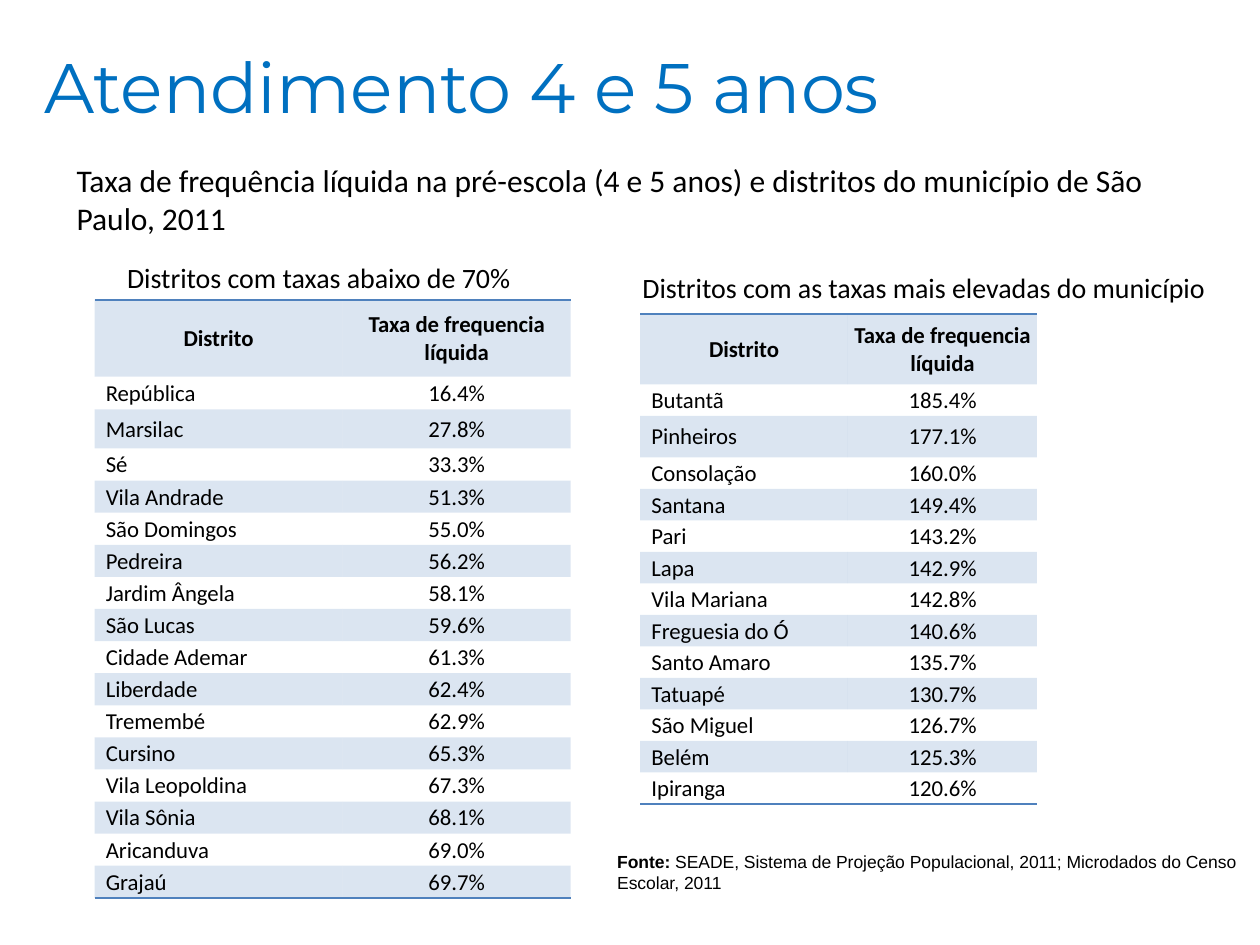
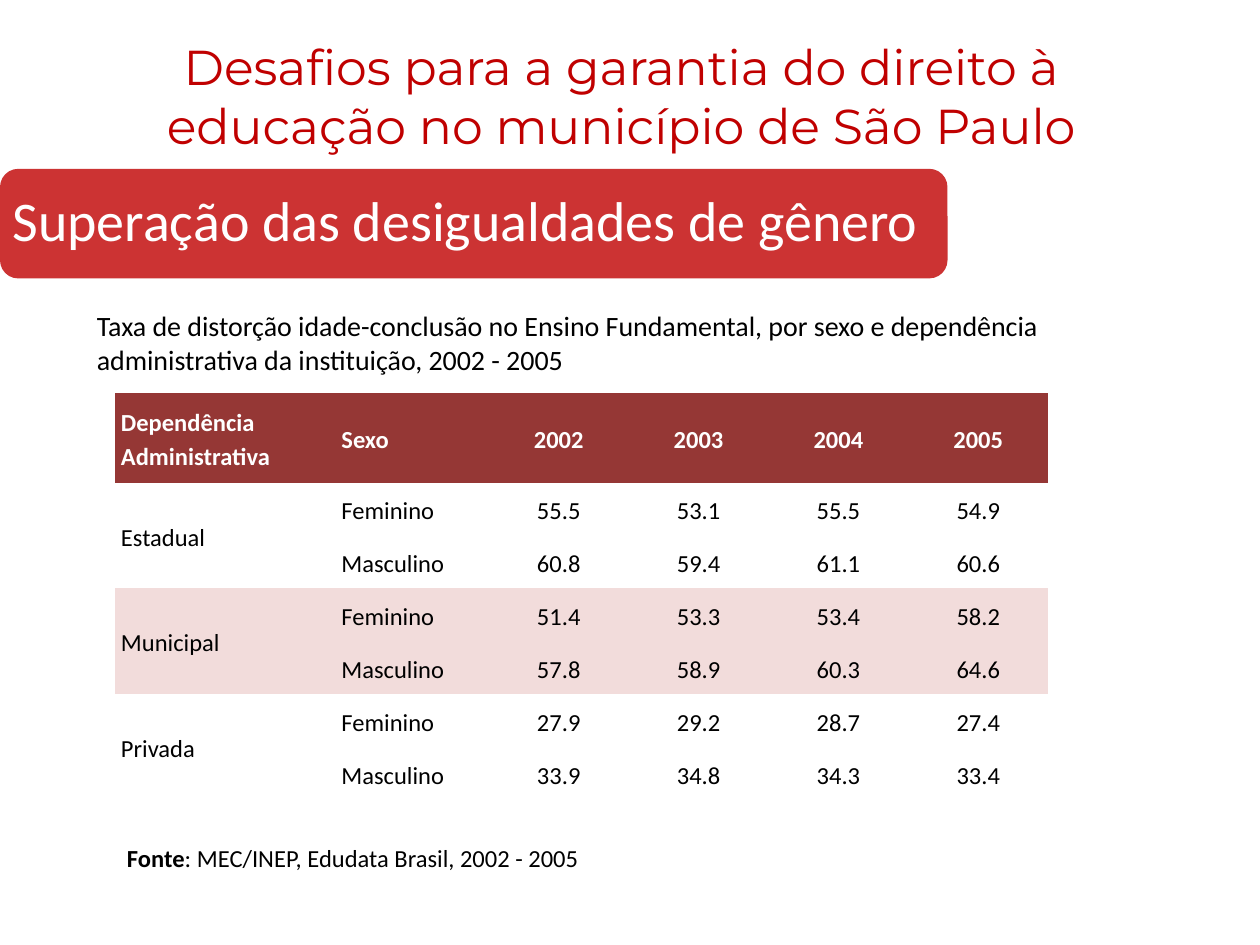
from lxml import etree
from pptx import Presentation
from pptx import util as u
from pptx.dml.color import RGBColor
from pptx.enum import shapes, text
from pptx.oxml.ns import qn

BLACK, WHITE = "000000", "FFFFFF"
TITLE_BLUE, TABLE_BLUE = "0070C0", "4F81BD"
RED, DARK_RED, PALE_RED = "C00000", "953735", "F2DCDB"
TITLE_FONT, BODY_FONT, SOURCE_FONT = "Montserrat", "Calibri", "Arial"
LEFT, CENTER = text.PP_ALIGN.LEFT, text.PP_ALIGN.CENTER
PLAIN_TABLE = "{2D5ABB26-0587-4C30-8999-92F81FD0307C}"
TITLE_ONLY = 5

DISTRICT_HEADER = ("Distrito", "Taxa de frequencia líquida")
LOWEST_RATES = [
    ("República", "16.4%"), ("Marsilac", "27.8%"), ("Sé", "33.3%"),
    ("Vila Andrade", "51.3%"), ("São Domingos", "55.0%"), ("Pedreira", "56.2%"),
    ("Jardim Ângela", "58.1%"), ("São Lucas", "59.6%"), ("Cidade Ademar", "61.3%"),
    ("Liberdade", "62.4%"), ("Tremembé", "62.9%"), ("Cursino", "65.3%"),
    ("Vila Leopoldina", "67.3%"), ("Vila Sônia", "68.1%"),
    ("Aricanduva", "69.0%"), ("Grajaú", "69.7%"),
]
HIGHEST_RATES = [
    ("Butantã", "185.4%"), ("Pinheiros", "177.1%"), ("Consolação", "160.0%"),
    ("Santana", "149.4%"), ("Pari", "143.2%"), ("Lapa", "142.9%"),
    ("Vila Mariana", "142.8%"), ("Freguesia do Ó", "140.6%"),
    ("Santo Amaro", "135.7%"), ("Tatuapé", "130.7%"), ("São Miguel", "126.7%"),
    ("Belém", "125.3%"), ("Ipiranga", "120.6%"),
]
DISTORTION = [
    ("Dependência Administrativa", "Sexo", "2002", "2003", "2004", "2005"),
    ("Estadual", "Feminino", "55.5", "53.1", "55.5", "54.9"),
    ("", "Masculino", "60.8", "59.4", "61.1", "60.6"),
    ("Municipal", "Feminino", "51.4", "53.3", "53.4", "58.2"),
    ("", "Masculino", "57.8", "58.9", "60.3", "64.6"),
    ("Privada", "Feminino", "27.9", "29.2", "28.7", "27.4"),
    ("", "Masculino", "33.9", "34.8", "34.3", "33.4"),
]


def rgb(color):
    return RGBColor.from_string(color)


def inches(values):
    return [u.Inches(value) for value in values]


def set_opacity(properties, percent):
    for color in properties.iter(qn("a:srgbClr")):
        etree.SubElement(color, qn("a:alpha"), val=str(percent * 1000))


def set_border(cell, edge, color):
    """Draw a 1 pt line on one edge, "a:lnT" or "a:lnB"."""
    line = etree.Element(qn(edge), w=str(u.Pt(1)))
    fill = etree.SubElement(line, qn("a:solidFill"))
    etree.SubElement(fill, qn("a:srgbClr"), val=color)
    cell._tc.get_or_add_tcPr().insert(0, line)


class SlideBuilder:
    def __init__(self):
        self.deck = Presentation()
        self.deck.slide_width, self.deck.slide_height = inches((10, 7.5))
        self.page = None

    def new_page(self, title, place, size, color, align):
        self.page = self.deck.slides.add_slide(self.deck.slide_layouts[TITLE_ONLY])
        box = self.page.shapes.title
        box.left, box.top, box.width, box.height = inches(place)
        frame = box.text_frame
        frame.text = title
        frame.auto_size = text.MSO_AUTO_SIZE.NONE
        frame.vertical_anchor = text.MSO_ANCHOR.MIDDLE
        self.style(frame.paragraphs[0], size, color, TITLE_FONT, align=align)

    def style(self, para, size, color=BLACK, font=BODY_FONT, bold=False, align=LEFT):
        para.alignment = align
        for span in para.runs:
            span.font.size, span.font.name = u.Pt(size), font
            span.font.bold, span.font.color.rgb = bold, rgb(color)

    def label(self, words, place, size, color=BLACK, font=BODY_FONT, lead="", wrap=True):
        """Add a text box; lead is a bold beginning."""
        frame = self.page.shapes.add_textbox(*inches(place)).text_frame
        frame.word_wrap = wrap
        frame.auto_size = text.MSO_AUTO_SIZE.SHAPE_TO_FIT_TEXT
        para = frame.paragraphs[0]
        para.text = lead or words
        if lead:
            para.add_run().text = words
            frame.vertical_anchor = text.MSO_ANCHOR.MIDDLE
        self.style(para, size, color, font)
        para.runs[0].font.bold = bool(lead)

    def band(self, place, color, opacity):
        band = self.page.shapes.add_shape(
            shapes.MSO_SHAPE.ROUNDED_RECTANGLE, *inches(place))
        band.shadow.inherit = False
        band.line.fill.background()
        band.fill.solid()
        band.fill.fore_color.rgb = rgb(color)
        set_opacity(band._element.spPr, opacity)

    def grid(self, rows, left, top, widths, heights):
        """Add a table without a style and fill in its wording."""
        frame = self.page.shapes.add_table(
            len(rows), len(widths),
            *inches((left, top, sum(widths), sum(heights))))
        table = frame.table
        table.first_row = table.horz_banding = False
        table._tbl.tblPr.find(qn("a:tableStyleId")).text = PLAIN_TABLE
        for column, width in zip(table.columns, inches(widths)):
            column.width = width
        for row, height, values in zip(table.rows, inches(heights), rows):
            row.height = height
            for cell, value in zip(row.cells, values):
                cell.text_frame.text = value
        return table

    def format_cell(self, cell, size, color, bold, align, margins, fill=None):
        cell.vertical_anchor = text.MSO_ANCHOR.MIDDLE
        (cell.margin_left, cell.margin_top,
         cell.margin_right, cell.margin_bottom) = inches(margins)
        if fill:
            cell.fill.solid()
            cell.fill.fore_color.rgb = rgb(fill)
        else:
            cell.fill.background()
        self.style(cell.text_frame.paragraphs[0], size, color, bold=bold, align=align)

    def district_table(self, rates, left, top, widths, heights):
        table = self.grid([DISTRICT_HEADER, *rates], left, top, widths, heights)
        for r, row in enumerate(table.rows):
            for c, cell in enumerate(row.cells):
                name = r > 0 and c == 0
                self.format_cell(
                    cell, 13, BLACK, r == 0, LEFT if name else CENTER,
                    (0.09 if name else 0.01, 0.01, 0.01, 0),
                    None if r % 2 else TABLE_BLUE)
                set_opacity(cell._tc.tcPr, 20)
                if r == 0:
                    set_border(cell, "a:lnT", TABLE_BLUE)
                elif r == len(rates):
                    set_border(cell, "a:lnB", TABLE_BLUE)

    def distortion_table(self, left, top, widths, heights):
        table = self.grid(DISTORTION, left, top, widths, heights)
        fills = [DARK_RED, None, None, PALE_RED, PALE_RED, None, None]
        for r, row in enumerate(table.rows):
            for c, cell in enumerate(row.cells):
                self.format_cell(
                    cell, 14, BLACK if r else WHITE, r == 0,
                    CENTER if c > 1 else LEFT, (0.05, 0, 0.05, 0), fills[r])
                cell.text_frame.paragraphs[0].line_spacing = 1.15
        for r in range(1, len(DISTORTION), 2):
            table.cell(r, 0).merge(table.cell(r + 1, 0))


def preschool_slide(builder):
    builder.new_page("Atendimento 4 e 5 anos", (0.25, 0.05, 9, 1.25),
                     40, TITLE_BLUE, LEFT)
    builder.district_table(LOWEST_RATES, 0.75, 2.38, (1.97, 1.81),
                           [0.61, 0.26, 0.31] + [0.255] * 14)
    builder.district_table(HIGHEST_RATES, 5.08, 2.49, (1.65, 1.5),
                           [0.56, 0.25, 0.33] + [0.25] * 11)
    builder.label("Taxa de frequência líquida na pré-escola (4 e 5 anos) e distritos "
                  "do município de São Paulo, 2011", (0.51, 1.23, 9.06, 0.71), 18)
    builder.label(" SEADE, Sistema de Projeção Populacional, 2011; "
                  "Microdados do Censo Escolar, 2011",
                  (4.8, 6.7, 5.2, 0.44), 10, font=SOURCE_FONT, lead="Fonte:")
    builder.label("Distritos com taxas abaixo de 70%", (0.91, 2.02, 3.39, 0.37), 16)
    builder.label("Distritos com as taxas mais elevadas do município",
                  (5, 2.1, 4.72, 0.37), 16)


def gender_slide(builder):
    builder.new_page("Desafios para a garantia do direito à educação no município "
                     "de São Paulo", (0.43, 0.13, 9, 1.25), 28, RED, CENTER)
    builder.distortion_table(0.91, 3.12, [1.75, 1.22] + [1.11] * 4,
                             [0.71] + [0.42] * 6)
    builder.label("Taxa de distorção idade-conclusão no Ensino Fundamental, por sexo e "
                  "dependência administrativa da instituição, 2002 - 2005",
                  (0.67, 2.4, 8.9, 0.64), 16)
    builder.label(": MEC/INEP, Edudata Brasil, 2002 - 2005",
                  (0.91, 6.64, 3.86, 0.34), 14, lead="Fonte")
    builder.band((0, 1.34, 7.52, 0.87), RED, 80)
    builder.label("Superação das desigualdades de gênero", (0, 1.42, 7.47, 0.64),
                  32, WHITE, wrap=False)


def main():
    builder = SlideBuilder()
    preschool_slide(builder)
    gender_slide(builder)
    builder.deck.save("out.pptx")


if __name__ == "__main__":
    main()
